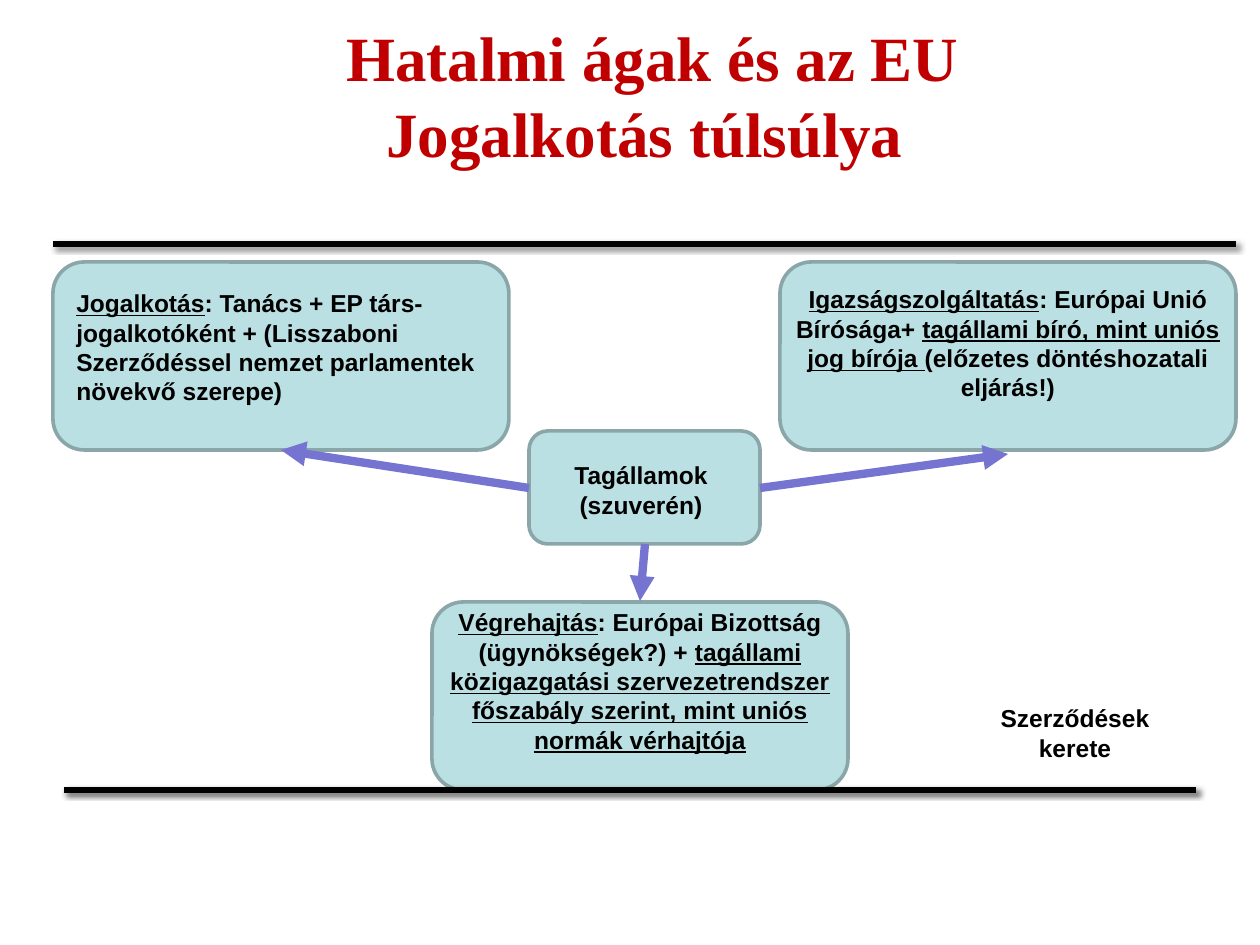
from lxml.etree import SubElement
from pptx import Presentation
from pptx.dml.color import RGBColor
from pptx.enum.shapes import MSO_CONNECTOR, MSO_SHAPE
from pptx.enum.text import MSO_ANCHOR, MSO_AUTO_SIZE, PP_ALIGN
from pptx.oxml.ns import qn
from pptx.util import Emu, Pt

PX_PER_INCH = 126
BLACK, RED, FILL, EDGE, ARROW = "000000", "C00000", "BBE0E3", "8AA6A8", "7575D1"


def px(*lengths):
    return [Emu(round(n * 914400 / PX_PER_INCH)) for n in lengths]


def rgb(code):
    return RGBColor.from_string(code)


def add_run(paragraph, text, size=14, color=BLACK, font="Arial", underline=False):
    run = paragraph.add_run()
    run.text = text
    run.font.name = font
    run.font.size = Pt(size)
    run.font.bold = True
    run.font.underline = underline
    run.font.color.rgb = rgb(color)


def add_title(slide, box, lines):
    title = slide.shapes.title
    title.left, title.top, title.width, title.height = px(*box)
    frame = title.text_frame
    frame.auto_size = MSO_AUTO_SIZE.NONE
    frame.vertical_anchor = MSO_ANCHOR.BOTTOM
    paragraph = frame.paragraphs[0]
    paragraph.alignment = PP_ALIGN.CENTER
    for index, line in enumerate(lines):
        if index:
            paragraph.add_line_break()
        add_run(paragraph, line, 36, RED, "Times New Roman")


def add_text(slide, box, paragraphs, align=PP_ALIGN.CENTER):
    """Each paragraph is a list of (text, underlined) pairs."""
    frame = slide.shapes.add_textbox(*px(*box)).text_frame
    frame.word_wrap = True
    for index, runs in enumerate(paragraphs):
        paragraph = frame.add_paragraph() if index else frame.paragraphs[0]
        paragraph.alignment = align
        for text, underlined in runs:
            add_run(paragraph, text, underline=underlined)


def add_branch(slide, box, text_box, runs, align=PP_ALIGN.CENTER):
    """Rounded card whose text box is placed relative to the card's corner."""
    left, top, width, height = box
    card = slide.shapes.add_shape(MSO_SHAPE.ROUNDED_RECTANGLE, *px(*box))
    card.shadow.inherit = False
    card.fill.solid()
    card.fill.fore_color.rgb = rgb(FILL)
    card.line.color.rgb = rgb(EDGE)
    card.line.width = Pt(2.08)
    dx, dy, text_width, text_height = text_box
    add_text(slide, (left + dx, top + dy, text_width, text_height), [runs], align)


def add_line(slide, start, end, color, width):
    """Straight line, returned with its empty effect list."""
    line = slide.shapes.add_connector(MSO_CONNECTOR.STRAIGHT, *px(*start, *end))
    line.line.color.rgb = rgb(color)
    line.line.width = Pt(width)
    return line, SubElement(line._element.spPr, qn("a:effectLst"))


def add_arrow(slide, start, end):
    arrow, _ = add_line(slide, start, end, ARROW, 4.75)
    SubElement(arrow.line._get_or_add_ln(), qn("a:tailEnd"), type="triangle")


def add_frame_rule(slide, left, right, y):
    _, effects = add_line(slide, (left, y), (right, y), BLACK, 3.5)
    shadow = SubElement(effects, qn("a:outerShdw"), blurRad=str(Pt(3)),
                        dist=str(Pt(2)), dir=str(45 * 60000), algn="tl",
                        rotWithShape="0")
    tint = SubElement(shadow, qn("a:srgbClr"), val=BLACK)
    SubElement(tint, qn("a:alpha"), val="60000")


def add_diagram(slide):
    add_branch(slide, (529, 431, 231, 113), (13, 23, 198, 72),
               [("Tagállamok (szuverén)", False)])
    add_branch(slide, (432, 602, 416, 188), (0, -1, 416, 161), [
        ("Végrehajtás", True),
        (": Európai Bizottság (ügynökségek?) + ", False),
        ("tagállami közigazgatási szervezetrendszer főszabály szerint, "
         "mint uniós normák vérhajtója", True)])
    add_branch(slide, (780, 262, 456, 188), (0, 16, 456, 161), [
        ("Igazságszolgáltatás", True),
        (": Európai Unió Bírósága+ ", False),
        ("tagállami bíró, mint uniós jog bírója ", True),
        ("(előzetes döntéshozatali eljárás!)", False)])
    add_branch(slide, (53, 262, 456, 188), (11, 20, 427, 131), [
        ("Jogalkotás", True),
        (": Tanács + EP társ-jogalkotóként + (Lisszaboni Szerződéssel "
         "nemzet parlamentek növekvő szerepe)", False)], PP_ALIGN.LEFT)

    for start, end in [((645, 544), (640, 601)),
                       ((760, 488), (1008, 454)),
                       ((529, 488), (281, 450))]:
        add_arrow(slide, start, end)

    add_frame_rule(slide, 53, 1236, 244)
    add_frame_rule(slide, 64, 1196, 790)
    add_text(slide, (914, 697, 322, 72),
             [[("Szerződések", False)], [("kerete", False)]])


def main():
    deck = Presentation()
    deck.slide_width, deck.slide_height = px(1260, 945)
    slide = deck.slides.add_slide(deck.slide_layouts[5])
    add_title(slide, (68, 40, 1153, 136),
              [" Hatalmi ágak és az EU", "Jogalkotás túlsúlya"])
    add_diagram(slide)
    deck.save("out.pptx")


if __name__ == "__main__":
    main()
